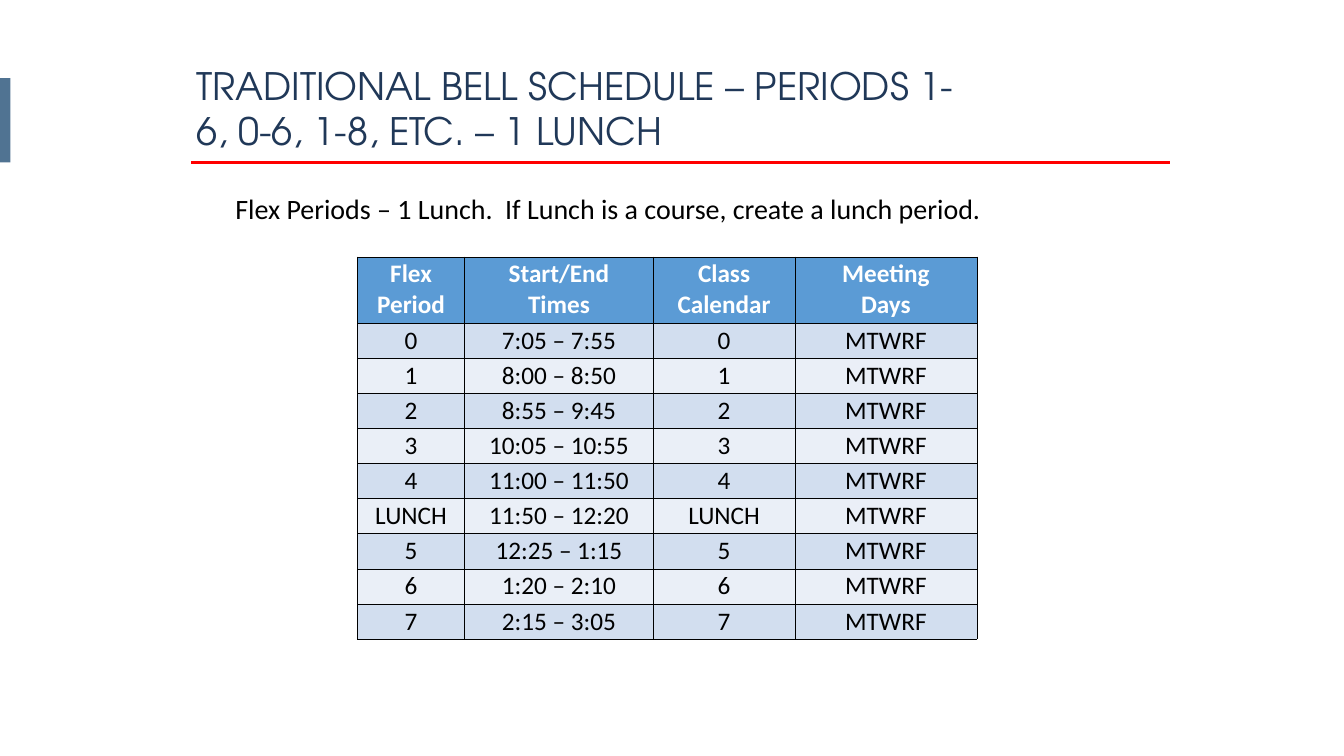
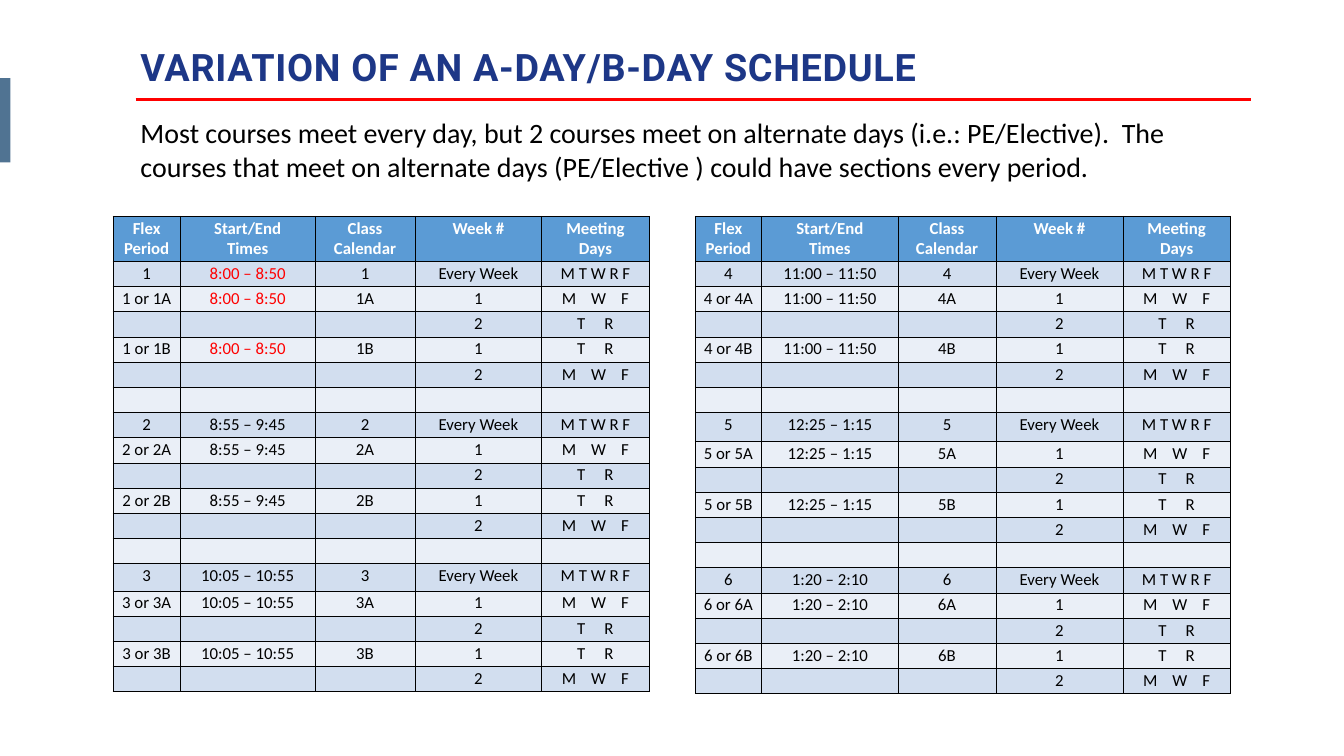
from lxml.etree import SubElement as Sub
from pptx import Presentation
from pptx.dml.color import RGBColor as Rgb
from pptx.enum.shapes import MSO_CONNECTOR as Link, MSO_SHAPE as Form
from pptx.enum.text import MSO_ANCHOR as Anchor, MSO_AUTO_SIZE as Auto, PP_ALIGN as Align
from pptx.oxml.ns import qn
from pptx.util import Cm, Pt

HUES = {
    "rule": "FF0000", "bar": "507392", "navy": "203858", "royal": "1D3787",
    "ink": "000000", "white": "FFFFFF", "alert": "FF0000",
    "head": "5B9BD5", "odd": "D2DEEF", "even": "EAEFF7",
}
BODY = {"name": "Calibri", "size": Pt(40), "bold": False}
TITLE = {"name": "TeX Gyre Adventor", "size": Pt(54), "bold": False}
STRONG = {"name": "Roboto", "size": Pt(54), "bold": True}
FRAME = {
    "word_wrap": True, "auto_size": Auto.SHAPE_TO_FIT_TEXT, "vertical_anchor": Anchor.TOP,
    "margin_left": Cm(0.25), "margin_right": Cm(0.25),
    "margin_top": Cm(0.13), "margin_bottom": Cm(0.13),
}
PARA = {"line_spacing": 1.0, "space_before": Pt(0), "space_after": Pt(0)}
CELL = {
    "vertical_anchor": Anchor.TOP, "margin_left": Cm(0.15), "margin_right": Cm(0.15),
    "margin_top": Cm(0.1), "margin_bottom": Cm(0.1),
}
HEADS = ["Flex\nPeriod", "Start/End\nTimes", "Class\nCalendar", "Meeting\nDays"]
WEEK_HEADS = HEADS[:3] + ["Week #"] + HEADS[3:]
BELLS = [
    ("0", "7:05 – 7:55"), ("1", "8:00 – 8:50"), ("2", "8:55 – 9:45"),
    ("3", "10:05 – 10:55"), ("4", "11:00 – 11:50"), ("LUNCH", "11:50 – 12:20"),
    ("5", "12:25 – 1:15"), ("6", "1:20 – 2:10"), ("7", "2:15 – 3:05"),
]
TIMES = dict(BELLS)
GAPS = {"M W F": 8, "T R": 11}


def put(item, vals):
    """Set each named value on an object."""
    for name, val in vals.items():
        setattr(item, name, val)


def paint(fill, hue):
    """Fill with one named colour."""
    fill.solid()
    fill.fore_color.rgb = Rgb.from_string(HUES[hue])


def style(para, look, hue, align, gap=0):
    """Format a paragraph and its runs, with letter spacing in points."""
    put(para, {**PARA, "alignment": align})
    for run in para.runs:
        put(run.font, look)
        run.font.color.rgb = Rgb.from_string(HUES[hue])
        if gap:
            run._r.get_or_add_rPr().set("spc", str(gap * 100))


def words(holder, box, text, look, hue, gap=0):
    """Move a placeholder to a box and set its plain text."""
    put(holder, dict(zip(("left", "top", "width", "height"), map(Cm, box))))
    frame = holder.text_frame
    frame.text = text
    put(frame, FRAME)
    para = frame.paragraphs[0]
    style(para, look, hue, Align.LEFT, gap)
    props = para._p.get_or_add_pPr()
    props.set("marL", "0")
    props.set("indent", "0")
    Sub(props, qn("a:buNone"))


def rule(slide, left, right, top):
    """Draw the red line below the title."""
    line = slide.shapes.add_connector(Link.STRAIGHT, Cm(left), Cm(top), Cm(right), Cm(top))
    line.line.width = Pt(4)
    line.line.color.rgb = Rgb.from_string(HUES["rule"])
    Sub(line._element.spPr, qn("a:effectLst"))


def bar(slide):
    """Draw the band at the left edge."""
    band = slide.shapes.add_shape(Form.RECTANGLE, Cm(0), Cm(3.94), Cm(0.53), Cm(4.24))
    band.shadow.inherit = False
    paint(band.fill, "bar")
    band.line.fill.background()


def border(cell):
    """Give a cell thin black edges."""
    props = cell._tc.get_or_add_tcPr()
    for side in ("lnL", "lnR", "lnT", "lnB"):
        edge = Sub(props, qn(f"a:{side}"), w=str(Pt(1)))
        Sub(Sub(edge, qn("a:solidFill")), qn("a:srgbClr"), val=HUES["ink"])


def grid(slide, spot, cols, highs, rows, size, alert=()):
    """Build a banded timetable at a spot, with the alert cells in red."""
    left, top = spot
    table = slide.shapes.add_table(
        len(rows), len(cols), Cm(left), Cm(top), Cm(sum(cols)), Cm(sum(highs))).table
    table.horz_banding = False
    for col, width in zip(table.columns, cols):
        col.width = Cm(width)
    for i, (row, high) in enumerate(zip(rows, highs)):
        table.rows[i].height = Cm(high)
        look = {**BODY, "size": Pt(size), "bold": i == 0}
        band = "head" if i == 0 else "odd" if i % 2 else "even"
        for j, text in enumerate(row):
            cell = table.cell(i, j)
            put(cell, CELL)
            border(cell)
            paint(cell.fill, band)
            if text:
                cell.text = text
            hue = "white" if i == 0 else "alert" if (i, j) in alert else "ink"
            for para in cell.text_frame.paragraphs:
                style(para, look, hue, Align.CENTER, GAPS.get(text, 0))


def weeks(periods):
    """List the rows of an alternating timetable for some periods."""
    rows = [WEEK_HEADS]
    for num in periods:
        time = TIMES[num]
        if len(rows) > 1:
            rows.append([""] * 5)
        rows.append([num, time, num, "Every Week", "M T W R F"])
        for day, first, then in (("A", "M W F", "T R"), ("B", "T R", "M W F")):
            rows.append([f"{num} or {num}{day}", time, num + day, "1", first])
            rows.append(["", "", "", "2", then])
    return rows


def bells(slide):
    """Lay out the traditional schedule."""
    title, body = slide.placeholders
    rule(slide, 9.65, 58.95, 8.18)
    words(body, (11.61, 9.53, 44.15, 1.96),
          "Flex Periods – 1 Lunch.  If Lunch is a course, create a lunch period.", BODY, "ink")
    bar(slide)
    words(title, (9.65, 3.02, 39.55, 4.88),
          "TRADITIONAL BELL SCHEDULE – PERIODS 1-6, 0-6, 1-8, ETC. – 1 LUNCH", TITLE, "navy")
    rows = [HEADS] + [[num, time, num, "MTWRF"] for num, time in BELLS]
    grid(slide, (18.01, 12.95), (5.41, 9.5, 7.14, 9.17), [3.33] + [1.77] * 9, rows, 36)


def swaps(slide):
    """Lay out the A-day and B-day schedule."""
    title, body = slide.placeholders
    rule(slide, 6.83, 63.02, 5.03)
    words(body, (6.83, 5.69, 53.59, 3.68),
          "Most courses meet every day, but 2 courses meet on alternate days "
          "(i.e.: PE/Elective).  The courses that meet on alternate days "
          "(PE/Elective ) could have sections every period.", BODY, "ink")
    bar(slide)
    words(title, (6.83, 2.06, 43.94, 2.57),
          "VARIATION OF AN A-DAY/B-DAY SCHEDULE", STRONG, "royal", 1)
    halves = (
        (5.69, (3.4, 6.78, 5.05, 6.38, 5.41), "123", {13: 1.37}, {(1, 1), (2, 1), (4, 1)}),
        (35.03, (3.35, 6.88, 4.93, 6.4, 5.41), "456", {7: 1.47}, ()),
    )
    for left, cols, periods, tall, alert in halves:
        rows = weeks(periods)
        highs = [2.27] + [tall.get(i, 1.27) for i in range(1, len(rows))]
        grid(slide, (left, 10.9), cols, highs, rows, 24, alert)


def main():
    """Build and save the deck."""
    deck = Presentation()
    put(deck, {"slide_width": Cm(67.73), "slide_height": Cm(38.1)})
    for fill in (bells, swaps):
        fill(deck.slides.add_slide(deck.slide_layouts[1]))
    deck.save("out.pptx")


if __name__ == "__main__":
    main()
